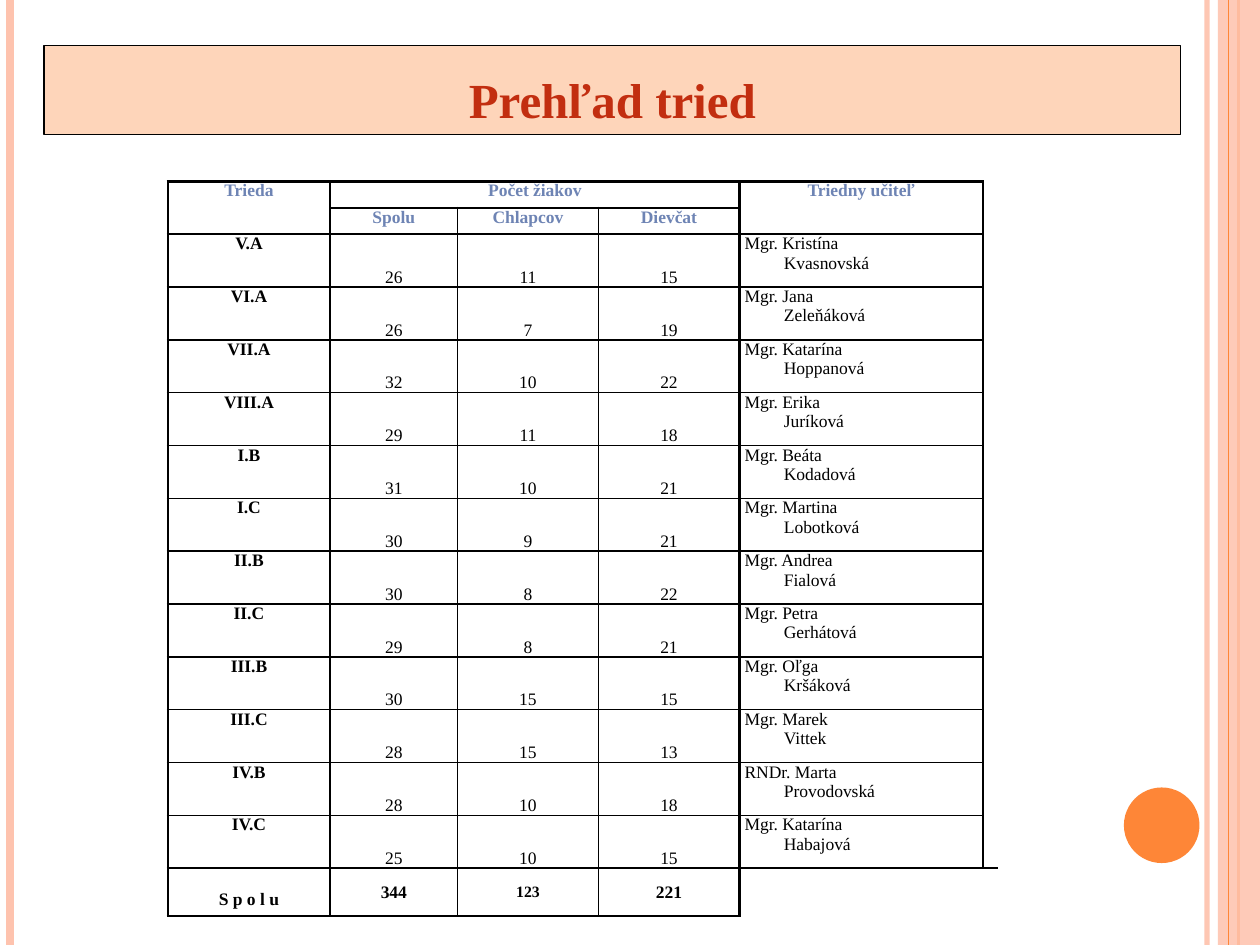
from lxml.etree import SubElement
from pptx import Presentation
from pptx.dml.color import RGBColor
from pptx.enum.shapes import MSO_CONNECTOR, MSO_SHAPE
from pptx.enum.text import MSO_ANCHOR, PP_ALIGN
from pptx.oxml import parse_xml
from pptx.oxml.ns import nsdecls, qn
from pptx.util import Pt

COLORS = {
    "pink": "FEC3AE",
    "orange": "FE8637",
    "title": "C22E10",
    "header": "6E84B4",
    "black": "000000",
}
FONT = "Times New Roman"
NO_STYLE = "{2D5ABB26-0587-4C30-8999-92F81FD0307C}"

COLUMN_WIDTHS = [92.9, 72.7, 80.6, 80.6, 139, 7.2]
ROW_HEIGHTS = [15.1, 15.1] + [30.2] * 12 + [27.4]
LAST_ROW = len(ROW_HEIGHTS) - 1
COLUMN_RULES = [1.5, 1.5, 1, 1, 1.5, 1.5]
ROW_RULES = [1.5] * 3 + [1] * 12 + [1.5]

CLASSES = [
    ("V.A", 26, 11, 15, "Mgr. Kristína", "Kvasnovská"),
    ("VI.A", 26, 7, 19, "Mgr. Jana", "Zeleňáková"),
    ("VII.A", 32, 10, 22, "Mgr. Katarína", "Hoppanová"),
    ("VIII.A", 29, 11, 18, "Mgr. Erika", "Juríková"),
    ("I.B", 31, 10, 21, "Mgr. Beáta", "Kodadová"),
    ("I.C", 30, 9, 21, "Mgr. Martina", "Lobotková"),
    ("II.B", 30, 8, 22, "Mgr. Andrea", "Fialová"),
    ("II.C", 29, 8, 21, "Mgr. Petra", "Gerhátová"),
    ("III.B", 30, 15, 15, "Mgr. Oľga", "Kršáková"),
    ("III.C", 28, 15, 13, "Mgr. Marek", "Vittek"),
    ("IV.B", 28, 10, 18, "RNDr. Marta", "Provodovská"),
    ("IV.C", 25, 10, 15, "Mgr. Katarína", "Habajová"),
]


def color(name):
    return RGBColor.from_string(COLORS[name])


def set_opacity(fill_parent, percent):
    rgb = next(fill_parent.iter(qn("a:srgbClr")))
    SubElement(rgb, qn("a:alpha")).set("val", str(percent * 1000))


def set_font(para, size, color_name="black", bold=False):
    para.font.name = FONT
    para.font.size = Pt(size)
    para.font.bold = bold
    para.font.color.rgb = color(color_name)


def add_filled(page, kind, box, color_name, opacity=100):
    shape = page.shapes.add_shape(kind, *map(Pt, box))
    shape.shadow.inherit = False
    shape.fill.solid()
    shape.fill.fore_color.rgb = color(color_name)
    if opacity < 100:
        set_opacity(shape._element.spPr, opacity)
    shape.line.fill.background()
    return shape


def add_stripe(page, x, height, color_name, width, opacity=100):
    stripe = page.shapes.add_connector(
        MSO_CONNECTOR.STRAIGHT, Pt(x), Pt(0), Pt(x), Pt(height))
    stripe.line.color.rgb = color(color_name)
    stripe.line.width = Pt(width)
    properties = stripe._element.spPr
    if opacity < 100:
        set_opacity(properties, opacity)
    SubElement(properties, qn("a:effectLst"))


def add_decoration(page, width, height):
    """Stripes along both edges and the disc at the lower right."""
    add_stripe(page, width - 30.24, height, "pink", 3, 93)
    add_stripe(page, 5.76, height, "pink", 4.5)
    add_stripe(page, width - 12.24, height, "orange", 1.5)
    add_filled(page, MSO_SHAPE.RECTANGLE,
               (width - 24, 0, 24, height), "pink", 87)
    add_stripe(page, width - 18, height, "orange", 0.75)
    add_filled(page, MSO_SHAPE.OVAL,
               (width - 77.76, height - 90, 43.2, 43.2), "orange")


def add_title(page, box, text):
    banner = add_filled(page, MSO_SHAPE.RECTANGLE, box, "orange", 34)
    banner.line.color.rgb = color("black")
    banner.line.width = Pt(0.75)
    frame = banner.text_frame
    frame.word_wrap = True
    frame.vertical_anchor = MSO_ANCHOR.BOTTOM
    para = frame.paragraphs[0]
    para.text = text
    para.alignment = PP_ALIGN.CENTER
    set_font(para, 28, "title", True)


def set_borders(cell, widths):
    """Draw the sides named in widths (L, R, T, B) in black."""
    properties = cell._tc.get_or_add_tcPr()
    for position, side in enumerate("LRTB"):
        width = widths.get(side, 0)
        paint = (f'<a:solidFill><a:srgbClr val="{COLORS["black"]}"/></a:solidFill>'
                 if width else "<a:noFill/>")
        properties.insert(position, parse_xml(
            f'<a:ln{side} {nsdecls("a")} w="{Pt(width)}">{paint}</a:ln{side}>'))


def cell_borders(row, column, cell):
    if column == 5:
        return {"L": 1.5, "B": 1.5} if row == LAST_ROW - 1 else {"L": 1.5}
    if (row, column) == (LAST_ROW, 4):
        return {"L": 1.5, "T": 1}
    height = cell.span_height if cell.is_merge_origin else 1
    width = cell.span_width if cell.is_merge_origin else 1
    return {"L": COLUMN_RULES[column], "R": COLUMN_RULES[column + width],
            "T": ROW_RULES[row], "B": ROW_RULES[row + height]}


def write_cell(cell, text, align=PP_ALIGN.CENTER, anchor=MSO_ANCHOR.TOP,
               size=10, color_name="black", bold=False):
    cell.text = str(text)
    cell.vertical_anchor = anchor
    for para in cell.text_frame.paragraphs:
        para.alignment = align
        set_font(para, size, color_name, bold)


def fill_header(table):
    titles = {(0, 0): "Trieda", (0, 1): "Počet žiakov", (0, 4): "Triedny učiteľ",
              (1, 1): "Spolu", (1, 2): "Chlapcov", (1, 3): "Dievčat"}
    for place, title in titles.items():
        write_cell(table.cell(*place), title, color_name="header", bold=True)


def fill_classes(table):
    for row, (name, *counts, first_name, surname) in enumerate(CLASSES, 2):
        write_cell(table.cell(row, 0), name, bold=True)
        for column, count in enumerate(counts, 1):
            write_cell(table.cell(row, column), count, anchor=MSO_ANCHOR.BOTTOM)
        teacher = table.cell(row, 4)
        write_cell(teacher, f"{first_name}\n{surname}", PP_ALIGN.LEFT)
        indented = teacher.text_frame.paragraphs[1]._p.get_or_add_pPr()
        indented.set("marL", str(Pt(22.5)))
        indented.set("indent", "0")


def fill_totals(table):
    totals = [("S p o l u", 10), (344, 10), (123, 9), (221, 10)]
    for column, (text, size) in enumerate(totals):
        write_cell(table.cell(LAST_ROW, column), text,
                   anchor=MSO_ANCHOR.MIDDLE, size=size, bold=True)
    table.cell(LAST_ROW, 0).margin_top = Pt(9)


def add_class_table(page, left, top):
    frame = page.shapes.add_table(
        len(ROW_HEIGHTS), len(COLUMN_WIDTHS), Pt(left), Pt(top),
        Pt(sum(COLUMN_WIDTHS)), Pt(sum(ROW_HEIGHTS)))
    table = frame.table
    table.first_row = table.horz_banding = False
    next(table._tbl.iter(qn("a:tableStyleId"))).text = NO_STYLE
    for column, width in zip(table.columns, COLUMN_WIDTHS):
        column.width = Pt(width)
    for row, height in zip(table.rows, ROW_HEIGHTS):
        row.height = Pt(height)
    for start, end in [((0, 0), (1, 0)), ((0, 1), (0, 3)), ((0, 4), (1, 4)),
                       ((LAST_ROW, 4), (LAST_ROW, 5))]:
        table.cell(*start).merge(table.cell(*end))

    for row in range(len(ROW_HEIGHTS)):
        for column in range(len(COLUMN_WIDTHS)):
            cell = table.cell(row, column)
            cell.fill.background()
            cell.margin_left = cell.margin_right = Pt(2.9)
            cell.margin_top = cell.margin_bottom = Pt(0)
            para = cell.text_frame.paragraphs[0]
            SubElement(para._p, qn("a:endParaRPr")).set("sz", "1000")
            if not cell.is_spanned:
                set_borders(cell, cell_borders(row, column, cell))
    fill_header(table)
    fill_classes(table)
    fill_totals(table)


def main():
    deck = Presentation()
    deck.slide_width, deck.slide_height = Pt(720), Pt(540)
    page = deck.slides.add_slide(deck.slide_layouts[6])
    add_decoration(page, 720, 540)
    add_title(page, (25.2, 25.9, 649.4, 51.1), "Prehľad tried")
    add_class_table(page, 95.8, 103.7)
    deck.save("out.pptx")


if __name__ == "__main__":
    main()
